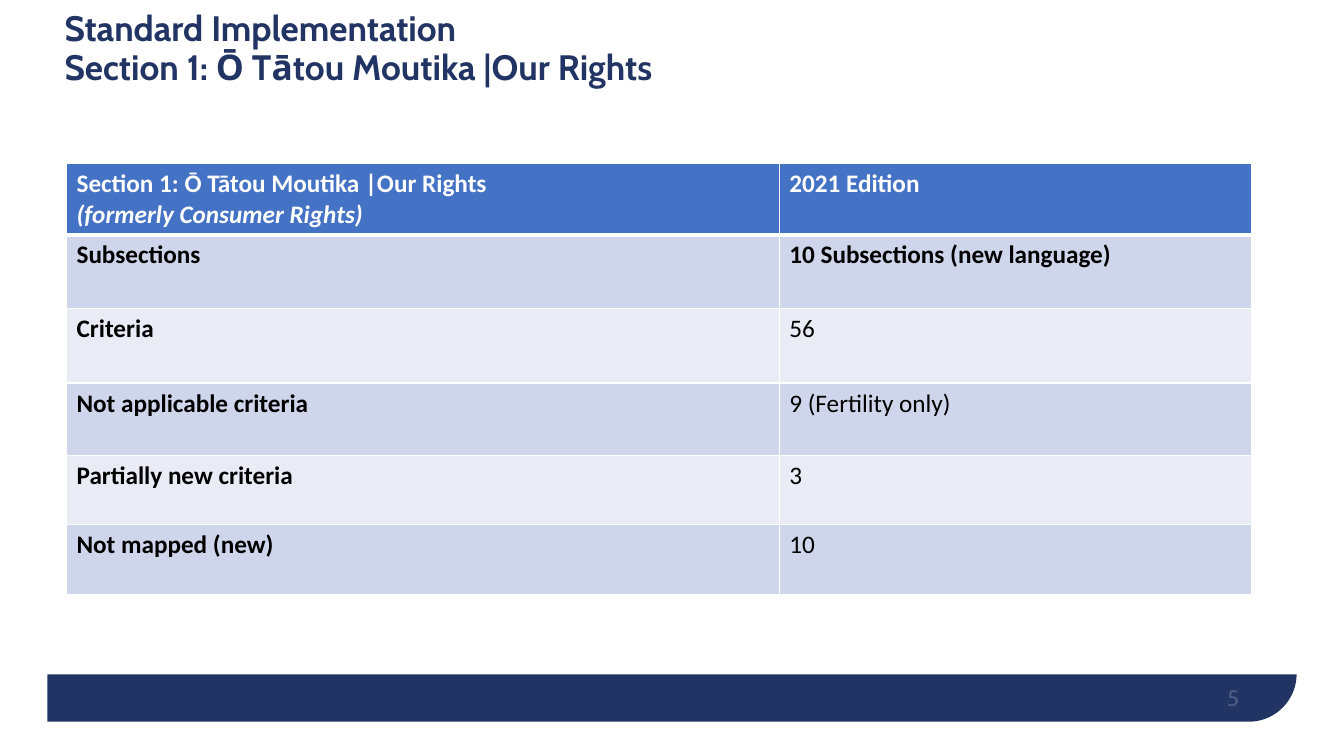
from dataclasses import dataclass

from lxml import etree
from pptx import Presentation
from pptx.dml.color import RGBColor
from pptx.enum.shapes import MSO_SHAPE
from pptx.enum.text import MSO_ANCHOR, MSO_AUTO_SIZE, PP_ALIGN
from pptx.oxml.ns import qn
from pptx.util import Inches, Pt

RECT, ROUND = MSO_SHAPE.RECTANGLE, MSO_SHAPE.ROUND_1_RECTANGLE
BOTTOM = MSO_ANCHOR.BOTTOM
LEFT, RIGHT = PP_ALIGN.LEFT, PP_ALIGN.RIGHT
NO_FIT = MSO_AUTO_SIZE.NONE
TITLE_ONLY = 5


@dataclass(frozen=True)
class Theme:
    navy: str = "213463"
    white: str = "FFFFFF"
    black: str = "000000"
    head: str = "4472C4"
    bands: tuple = ("CFD5EA", "E9EBF5")
    title_font: str = "Cabin"
    body_font: str = "Calibri"
    title_size: float = 25.2
    body_size: float = 18
    page_size: float = 16


def write(frame, lines, font, size, color, bold=False, italics=(), align=LEFT, spacing=None):
    """Fill a text frame, one paragraph per line."""
    for i, line in enumerate(lines):
        para = frame.paragraphs[0] if i == 0 else frame.add_paragraph()
        para.alignment = align
        para.space_before = Pt(0)
        if spacing:
            para.line_spacing = spacing
        run = para.add_run()
        run.text = line
        run.font.name, run.font.size = font, Pt(size)
        run.font.bold, run.font.italic = bold, i in italics
        run.font.color.rgb = RGBColor.from_string(color)


class Page:
    def __init__(self, deck, theme):
        self.theme = theme
        self.slide = deck.slides.add_slide(deck.slide_layouts[TITLE_ONLY])
        self.shapes = self.slide.shapes

    def block(self, kind, box, color):
        shape = self.shapes.add_shape(kind, *map(Inches, box))
        shape.shadow.inherit = False
        shape.fill.solid()
        shape.fill.fore_color.rgb = RGBColor.from_string(color)
        shape.line.fill.background()
        return shape

    def title(self, lines, box):
        t, shape = self.theme, self.shapes.title
        shape.left, shape.top, shape.width, shape.height = map(Inches, box)
        # Bring the title in front of the white panel
        self.shapes._spTree.append(shape._element)
        frame = shape.text_frame
        frame.word_wrap, frame.auto_size = True, NO_FIT
        frame.vertical_anchor = BOTTOM
        frame.margin_bottom = Inches(0.58)
        write(frame, lines, t.title_font, t.title_size, t.navy, bold=True, spacing=0.9)

    def number(self, text, box):
        t = self.theme
        frame = self.shapes.add_textbox(*map(Inches, box)).text_frame
        frame.word_wrap, frame.vertical_anchor = True, BOTTOM
        frame.margin_left = frame.margin_right = frame.margin_top = frame.margin_bottom = 0
        write(frame, [text], t.title_font, t.page_size, t.white, align=RIGHT)
        color = frame._txBody.find(".//" + qn("a:srgbClr"))
        etree.SubElement(color, qn("a:alpha"), val="20000")

    def edges(self, cell, base):
        props = cell._tc.get_or_add_tcPr()
        for side, width in (("L", 1), ("R", 1), ("T", 1), ("B", base)):
            line = etree.SubElement(props, qn("a:ln" + side), w=str(Pt(width)))
            fill = etree.SubElement(line, qn("a:solidFill"))
            etree.SubElement(fill, qn("a:srgbClr"), val=self.theme.white)

    def table(self, rows, box, widths, heights):
        t = self.theme
        grid = self.shapes.add_table(len(rows), len(widths), *map(Inches, box)).table
        for col, width in zip(grid.columns, widths):
            col.width = Inches(width)
        for r, (row, height) in enumerate(zip(rows, heights)):
            grid.rows[r].height = Inches(height)
            for c, text in enumerate(row):
                cell = grid.cell(r, c)
                self.edges(cell, 3 if r == 0 else 1)
                cell.fill.solid()
                fill = t.bands[(r - 1) % 2] if r else t.head
                cell.fill.fore_color.rgb = RGBColor.from_string(fill)
                write(cell.text_frame, text.split("\n"), t.body_font, t.body_size,
                      t.black if r else t.white, bold=c == 0 or r < 2, italics=(1,))


def main():
    deck = Presentation()
    deck.slide_width, deck.slide_height = Inches(13.33), Inches(7.5)
    theme = Theme()
    page = Page(deck, theme)

    # Footer band: navy panel, rounded at bottom right, under a white panel
    band = page.block(ROUND, (0.47, 0.37, 12.39, 6.79), theme.navy)
    band.adjustments[0] = 0.07
    band.rotation = 180
    band._element.spPr.xfrm.set("flipH", "1")
    page.block(RECT, (0, 0, 13.33, 6.69), theme.white)
    page.number("5", (9.29, 6.65, 3, 0.4))

    # Title
    page.title(["Standard Implementation", "Section 1:\u00a0Ō Tātou Moutika |Our Rights"],
               (0.54, 0.28, 7.9, 1.17))

    # Summary of the section
    rows = [
        ("Section 1:\u00a0Ō Tātou Moutika |Our Rights\n(formerly Consumer Rights)", "2021 Edition"),
        ("Subsections", "10 Subsections (new language)"),
        ("Criteria", "56"),
        ("Not applicable criteria", "9 (Fertility only)"),
        ("Partially new criteria", "3"),
        ("Not mapped (new)", "10"),
    ]
    page.table(rows, (0.66, 1.62, 11.75, 4.28), (7.07, 4.68),
               (0.71, 0.73, 0.74, 0.72, 0.68, 0.7))

    deck.save("out.pptx")


if __name__ == "__main__":
    main()
